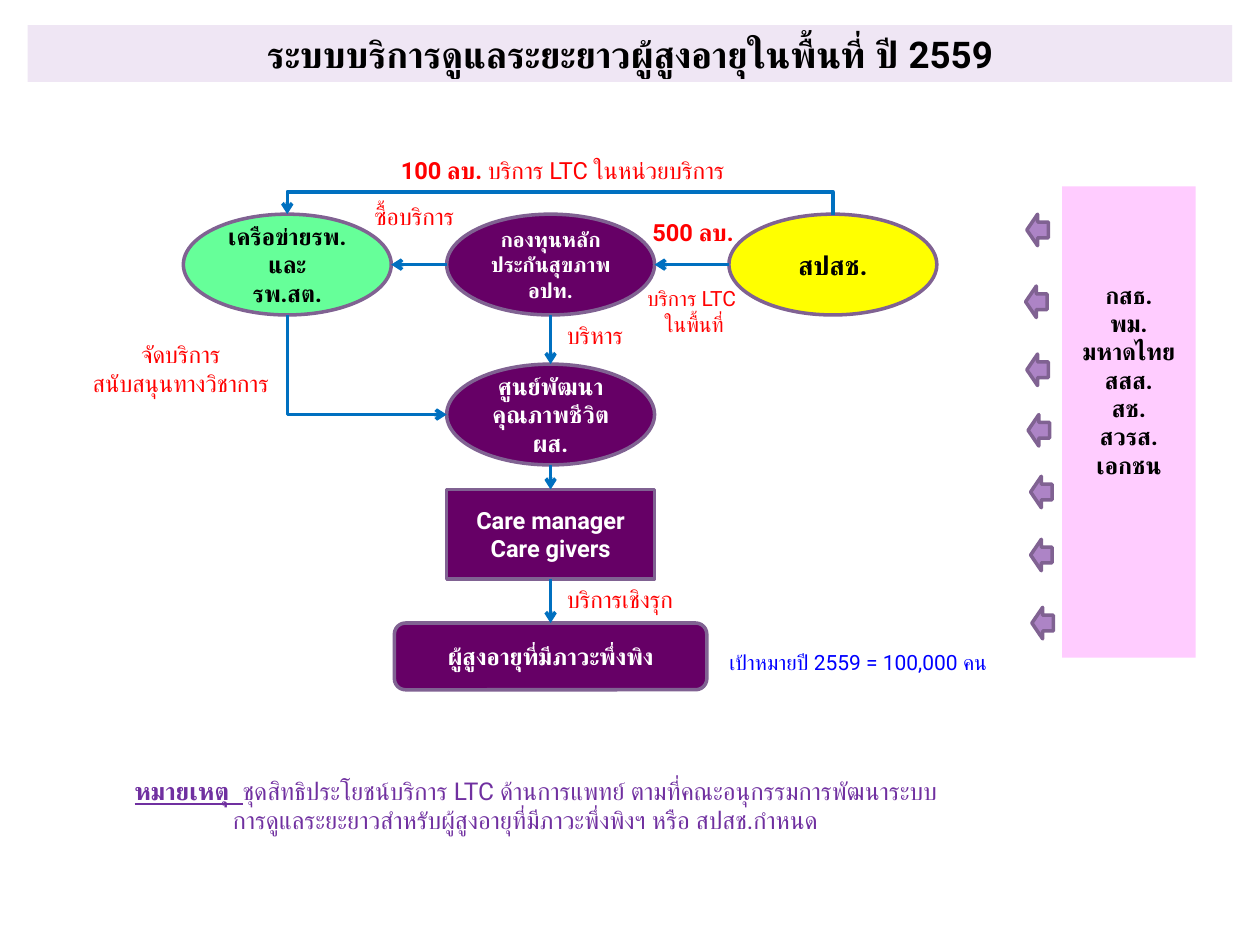
from lxml import etree
from pptx import Presentation
from pptx.dml.color import RGBColor
from pptx.enum import shapes, text
from pptx.oxml.ns import qn
from pptx.util import Inches, Pt

FONT = "Roboto"
PLUM, EDGE, BLUE, RED = "660066", "806292", "0070C0", "FF0000"
BLACK, WHITE, NOTE = "000000", "FFFFFF", "7030A0"
KIND, ALIGN = shapes.MSO_SHAPE, text.PP_ALIGN

# Flow chart: column centres, row centres and sizes
LEFT, MID, RIGHT = 2.28, 4.37, 6.61
TOP, HUB, CARE, ELDER = 2.1, 3.29, 4.24, 5.21
OVAL, BOX, WIDE = (1.65, 0.8), (1.65, 0.71), (2.48, 0.53)

# Kind, centre x, centre y, size, fill, text colour, text size, lines
NODES = [
    (KIND.OVAL, LEFT, TOP, OVAL, "66FF99", BLACK, 13.5,
     ["เครือข่ายรพ. และ", "รพ.สต."]),
    (KIND.OVAL, MID, TOP, OVAL, PLUM, WHITE, 12,
     ["กองทุนหลักประกันสุขภาพ อปท."]),
    (KIND.OVAL, RIGHT, TOP, OVAL, "FFFF00", BLACK, 15, ["สปสช."]),
    (KIND.OVAL, MID, HUB, OVAL, PLUM, WHITE, 13.5,
     ["ศูนย์พัฒนาคุณภาพชีวิต ผส."]),
    (KIND.RECTANGLE, MID, CARE, BOX, PLUM, WHITE, 13.5,
     ["Care manager", "Care givers"]),
    (KIND.ROUNDED_RECTANGLE, MID, ELDER, WIDE, PLUM, WHITE, 13.5,
     ["ผู้สูงอายุที่มีภาวะพึ่งพิง"]),
]

# Place, size, colour, centred, lines; a line is a list of (words, bold)
# Labels of vertical arrows stand beside the line
LABELS = [
    ((5.08, 1.68, 0.98, 0.33), 13.5, RED, False, [[("500 ลบ.", True)]]),
    ((5.01, 2.22, 1, 0.5), 12, RED, True,
     [[("บริการ LTC ", False)], [("ในพื้นที่", False)]]),
    ((2.87, 1.55, 0.89, 0.56), 13.5, RED, False, [[("ซื้อบริการ", False)]]),
    ((2.34, 1.19, 4.25, 0.33), 13.5, RED, True,
     [[("100 ลบ. ", True), ("บริการ LTC ในหน่วยบริการ", False)]]),
    ((MID + 0.03, 2.5, 0.77, 0.33), 13.5, RED, False, [[("บริหาร", False)]]),
    ((LEFT - 1.73, 2.65, 1.77, 0.78), 13.5, RED, True,
     [[("จัดบริการ", False)], [("สนับสนุนทางวิชาการ", False)]]),
    ((MID + 0.03, 4.59, 1.18, 0.33), 13.5, RED, False,
     [[("บริการเชิงรุก", False)]]),
    ((5.69, 5.11, 2.45, 0.3), 12, "0000FF", False,
     [[("เป้าหมายปี 2559 = 100,000 คน", False)]]),
]
REMARK = [
    [("หมายเหตุ  ", True),
     ("ชุดสิทธิประโยชน์บริการ LTC ด้านการแพทย์ ตามที่คณะอนุกรรมการพัฒนาระบบ", False)],
    [("การดูแลระยะยาวสำหรับผู้สูงอายุที่มีภาวะพึ่งพิงฯ หรือ สปสช.กำหนด", False)],
]
TITLE = "ระบบบริการดูแลระยะยาวผู้สูงอายุในพื้นที่ ปี 2559"
ALLIES = ["กสธ.", "พม.", "มหาดไทย", "สสส.", "สช.", "สวรส.", "เอกชน"]
HINTS = [(8.15, 1.7), (8.14, 2.27), (8.15, 2.81), (8.16, 3.29),
         (8.18, 3.78), (8.18, 4.28), (8.19, 4.82)]

deck = Presentation()
deck.slide_width, deck.slide_height = Inches(10), Inches(7.5)
slide = deck.slides.add_slide(deck.slide_layouts[6])


def rgb(code):
    return RGBColor.from_string(code)


def write(item, lines, size, color, center=True, anchor="TOP"):
    frame = item.text_frame
    frame.word_wrap = True
    frame.vertical_anchor = getattr(text.MSO_ANCHOR, anchor)
    for i, line in enumerate(lines):
        para = frame.add_paragraph() if i else frame.paragraphs[0]
        para.alignment = ALIGN.CENTER if center else ALIGN.LEFT
        font = para.font
        font.name, font.size, font.color.rgb = FONT, Pt(size), rgb(color)
        for words, bold in line:
            run = para.add_run()
            run.text, run.font.bold = words, bold
    return frame


def shape(kind, place, fill, edge=None):
    item = slide.shapes.add_shape(kind, *map(Inches, place))
    item.shadow.inherit = False
    item.fill.solid()
    item.fill.fore_color.rgb = rgb(fill)
    if edge:
        item.line.color.rgb, item.line.width = rgb(edge), Pt(2)
    else:
        item.line.fill.background()
    return item


def label(place, *args):
    return write(slide.shapes.add_textbox(*map(Inches, place)), *args)


def link(kind, *ends):
    item = slide.shapes.add_connector(kind, *map(Inches, ends))
    item.line.color.rgb, item.line.width = rgb(BLUE), Pt(2)
    etree.SubElement(item.line._get_or_add_ln(), qn("a:tailEnd"), type="arrow")
    etree.SubElement(item._element.spPr, qn("a:effectLst"))
    return item


def elbow(x1, y1, x2, y2, preset, flip, bend=None):
    """Bent arrow that leaves its start vertically (a quarter turn)."""
    wide, high = abs(y2 - y1), abs(x2 - x1)
    x, y = (x1 + x2 - wide) / 2, (y1 + y2 - high) / 2
    item = link(shapes.MSO_CONNECTOR.ELBOW, x, y, x + wide, y + high)
    props = item._element.spPr
    frame, geom = props.find(qn("a:xfrm")), props.find(qn("a:prstGeom"))
    frame.set("rot", str(270 * 60000))
    frame.set(flip, "1")
    geom.set("prst", preset)
    if bend:
        etree.SubElement(geom.find(qn("a:avLst")), qn("a:gd"),
                         name="adj1", fmla=f"val {bend * 100000}")


# Title band and panel of partners
band = shape(KIND.RECTANGLE, (0.22, 0.2, 9.56, 0.45), "EFE6F4")
write(band, [[(TITLE, True)]], 21, BLACK)
panel = shape(KIND.RECTANGLE, (8.43, 1.48, 1.06, 3.74), "FFCCFF")
frame = write(panel, [[(name, True)] for name in ALLIES], 13.5, BLACK, True, "MIDDLE")
frame.margin_bottom = Inches(0.72)

# Nodes
for kind, x, y, (w, h), fill, color, size, lines in NODES:
    node = shape(kind, (x - w / 2, y - h / 2, w, h), fill, EDGE)
    write(node, [[(line, True)] for line in lines], size, color, True, "MIDDLE")

# Arrows between nodes
half, rise = OVAL[0] / 2, OVAL[1] / 2
STRAIGHT = shapes.MSO_CONNECTOR.STRAIGHT
for start, end in [(RIGHT, MID), (MID, LEFT)]:
    link(STRAIGHT, start - half, TOP, end + half, TOP)
stops = [(TOP, rise), (HUB, rise), (CARE, BOX[1] / 2), (ELDER, WIDE[1] / 2)]
for (y1, h1), (y2, h2) in zip(stops, stops[1:]):
    link(STRAIGHT, MID, y1 + h1, MID, y2 - h2)
elbow(RIGHT, TOP - rise + 0.01, LEFT, TOP - rise, "bentConnector3", "flipV", 19)
elbow(LEFT, TOP + rise, MID - half, HUB, "bentConnector2", "flipH")

# Labels
for place, size, color, center, lines in LABELS:
    label(place, lines, size, color, center)

# Remark with an underlined heading and an indented second line
frame = label((0.97, 6.11, 7.46, 0.57), REMARK, 14, NOTE, False)
first, second = frame.paragraphs
first.runs[0].font.underline = True
second._p.get_or_add_pPr().set("marL", str(Inches(0.78)))

# Small arrows from the panel
for x, y in HINTS:
    shape(KIND.LEFT_ARROW, (x, y, 0.17, 0.25), "AD84C6", EDGE)

deck.save("out.pptx")
